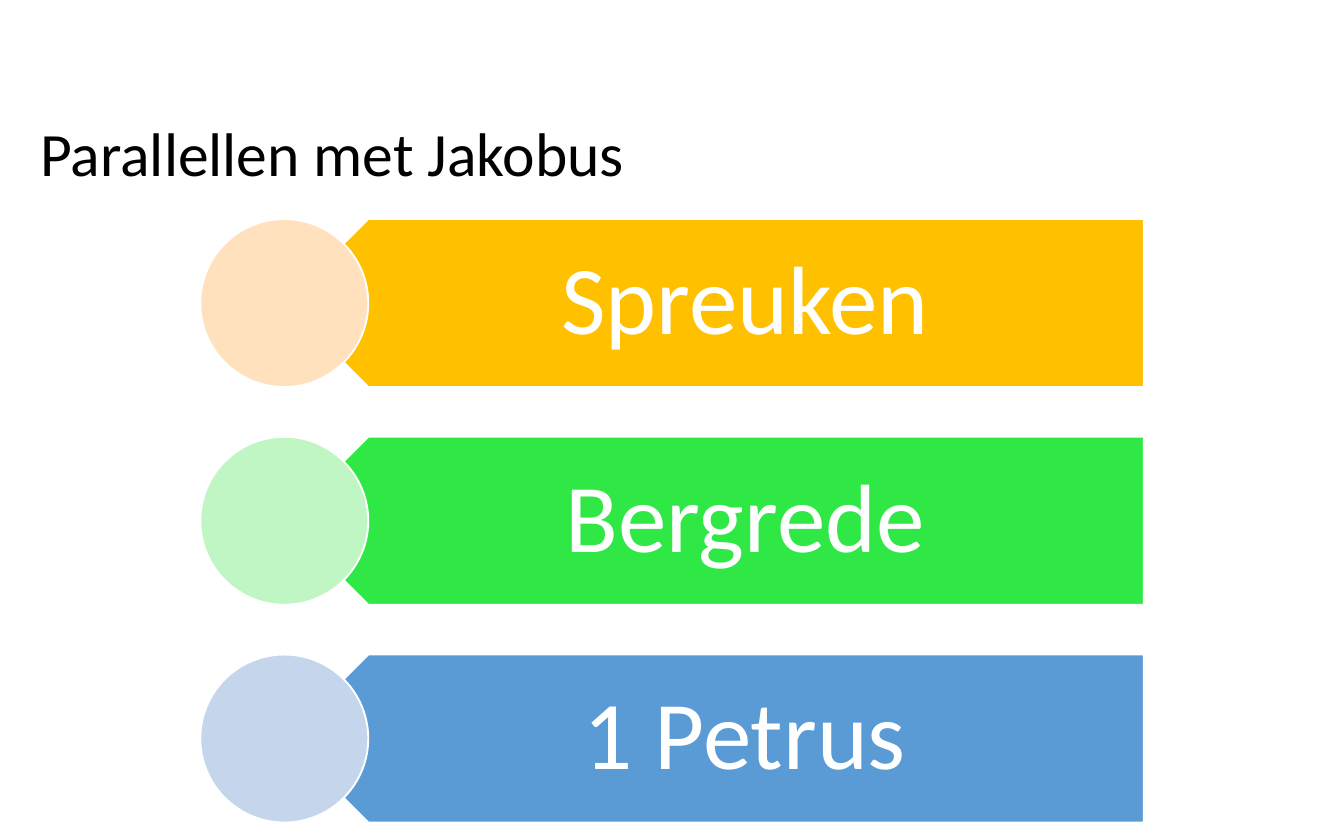
import pptx
import pptx.util
from pptx.dml.color import RGBColor
from pptx.enum.shapes import MSO_SHAPE
from pptx.enum.text import MSO_ANCHOR, MSO_AUTO_SIZE, PP_ALIGN

Inches = pptx.util.Inches
SLIDE_W, SLIDE_H = 10, 6.25
WHITE, BLACK = "FFFFFF", "000000"

# Book, banner colour, disc colour
PARALLELS = [
    ("Spreuken", "FFC000", "FFE2BD"),
    ("Bergrede", "30E845", "C0F6C4"),
    ("1 Petrus", "5B9BD5", "C5D6EC"),
]


def colour(hex_string):
    return RGBColor.from_string(hex_string)


def write(frame, text, size, text_colour, align):
    frame.word_wrap = True
    frame.auto_size = MSO_AUTO_SIZE.NONE
    frame.vertical_anchor = MSO_ANCHOR.MIDDLE
    paragraph = frame.paragraphs[0]
    paragraph.text = text
    paragraph.alignment = align
    paragraph.line_spacing = 0.9
    paragraph.font.name = "Calibri"
    paragraph.font.size = pptx.util.Pt(size)
    paragraph.font.color.rgb = colour(text_colour)


def add_outlined(slide, preset, box, fill):
    shape = slide.shapes.add_shape(preset, *map(Inches, box))
    shape.shadow.inherit = False
    shape.fill.solid()
    shape.fill.fore_color.rgb = colour(fill)
    shape.line.color.rgb = colour(WHITE)
    shape.line.width = pptx.util.Pt(1)
    return shape


def place_title(slide, box, text):
    title = slide.shapes.title
    title.left, title.top, title.width, title.height = map(Inches, box)
    write(title.text_frame, text, 33, BLACK, PP_ALIGN.LEFT)


def place_parallel(slide, box, book, banner_fill, disc_fill):
    left, top, width, height = box

    # Banner pointing left, its tip at the centre of the disc
    banner_box = (left + height / 2, top, width - height / 2, height)
    banner = add_outlined(slide, MSO_SHAPE.PENTAGON, banner_box, banner_fill)
    banner.rotation = 180

    # Upright label over the banner
    label_left = left + height * 0.75
    label = slide.shapes.add_textbox(
        *map(Inches, (label_left, top, left + width - label_left, height)))
    frame = label.text_frame
    frame.margin_left, frame.margin_right = Inches(0.55), Inches(0.4)
    frame.margin_top = frame.margin_bottom = Inches(0.22)
    write(frame, book, 52, WHITE, PP_ALIGN.CENTER)

    # Disc
    add_outlined(slide, MSO_SHAPE.OVAL, (left, top, height, height), disc_fill)


def place_parallels(slide, box):
    left, top, width, height = box
    row_height = SLIDE_H / 5
    pitch = (height - row_height) / (len(PARALLELS) - 1)
    for row, parallel in enumerate(PARALLELS):
        place_parallel(slide, (left, top + row * pitch, width, row_height), *parallel)


def main():
    deck = pptx.Presentation()
    deck.slide_width, deck.slide_height = Inches(SLIDE_W), Inches(SLIDE_H)
    slide = deck.slides.add_slide(deck.slide_layouts[5])
    place_title(slide, (0.02 * SLIDE_W, 0.68, 0.93 * SLIDE_W, 0.97),
                "Parallellen met Jakobus")
    place_parallels(slide, (1.49, 1.63, 7.02, 4.49))
    deck.save("out.pptx")


if __name__ == "__main__":
    main()
